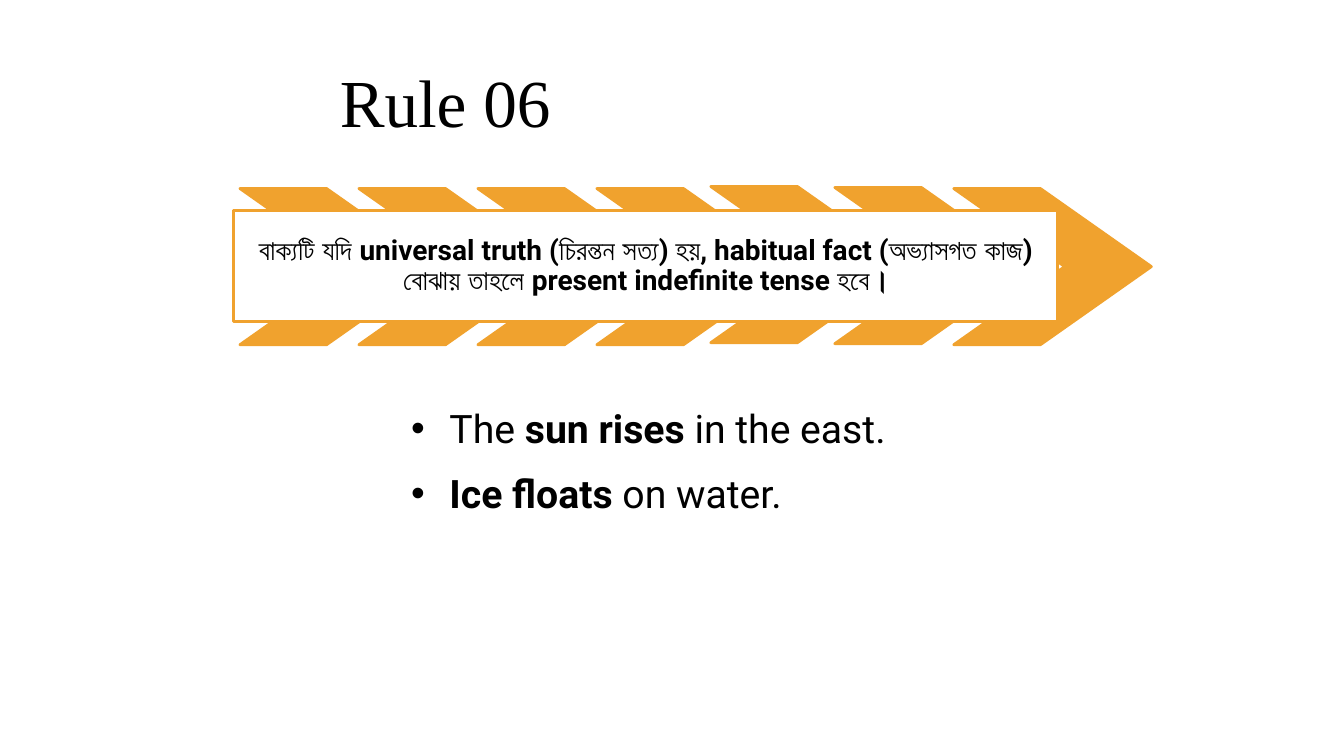
from lxml import etree
from pptx import Presentation
from pptx.dml.color import RGBColor
from pptx.enum.shapes import MSO_SHAPE
from pptx.enum.text import MSO_ANCHOR, PP_ALIGN
from pptx.oxml.ns import qn
from pptx.util import Inches, Pt

CHEVRON = MSO_SHAPE.CHEVRON
RECTANGLE = MSO_SHAPE.RECTANGLE
ANCHOR_TOP, ANCHOR_MIDDLE, ANCHOR_BOTTOM = MSO_ANCHOR.TOP, MSO_ANCHOR.MIDDLE, MSO_ANCHOR.BOTTOM
CENTER = PP_ALIGN.CENTER

ORANGE = RGBColor(0xF0, 0xA2, 0x2E)
WHITE = RGBColor(0xFF, 0xFF, 0xFF)
BLACK = RGBColor(0x00, 0x00, 0x00)
SERIF, SANS = "Times New Roman", "Roboto"

RULE = ("বাক্যটি যদি universal truth (চিরন্তন সত্য) হয়, habitual fact "
        "(অভ্যাসগত কাজ) বোঝায় তাহলে present indefinite tense হবে।")
# Each example is a list of (text, bold) runs
EXAMPLES = [
    [("The ", False), ("sun rises ", True), ("in the east.", False)],
    [("Ice floats ", True), ("on water.", False)],
]

CHEVRON_COUNT = 7
CHEVRON_LEFT, CHEVRON_TOP, CHEVRON_STEP = 2.38, 1.87, 1.18
# Two chevrons sit slightly off the row: index -> (right, down)
CHEVRON_SHIFTS = {4: (-0.05, -0.02), 5: (0, -0.01)}


def set_frame(shape, anchor, margin_x, margin_y):
    frame = shape.text_frame
    frame.word_wrap = True
    frame.vertical_anchor = anchor
    frame.margin_left = frame.margin_right = Inches(margin_x)
    frame.margin_top = frame.margin_bottom = Inches(margin_y)
    return frame


def style_paragraph(paragraph, font_name, size, line_spacing):
    paragraph.line_spacing = line_spacing
    paragraph.font.name = font_name
    paragraph.font.size = Pt(size)
    paragraph.font.color.rgb = BLACK


def add_outlined_shape(slide, kind, left, top, width, height, fill):
    shape = slide.shapes.add_shape(
        kind, Inches(left), Inches(top), Inches(width), Inches(height))
    shape.shadow.inherit = False
    shape.fill.solid()
    shape.fill.fore_color.rgb = fill
    shape.line.color.rgb = ORANGE
    shape.line.width = Pt(2)
    return shape


def add_text_box(slide, left, top, width, height):
    return slide.shapes.add_textbox(
        Inches(left), Inches(top), Inches(width), Inches(height))


def add_title(slide):
    box = add_text_box(slide, 3.17, 0.85, 8.36, 0.76)
    paragraph = set_frame(box, ANCHOR_BOTTOM, 0.2, 0.2).paragraphs[0]
    paragraph.text = "Rule 06"
    style_paragraph(paragraph, SERIF, 48, 0.9)


def add_chevrons(slide):
    for index in range(CHEVRON_COUNT):
        right, down = CHEVRON_SHIFTS.get(index, (0, 0))
        chevron = add_outlined_shape(
            slide, CHEVRON, CHEVRON_LEFT + index * CHEVRON_STEP + right,
            CHEVRON_TOP + down, 1.96, 1.55, ORANGE)
        chevron.adjustments[0] = 0.71


def add_rule_panel(slide):
    panel = add_outlined_shape(slide, RECTANGLE, 2.32, 2.09, 8.17, 1.1, WHITE)
    paragraph = set_frame(panel, ANCHOR_MIDDLE, 0.06, 0.06).paragraphs[0]
    paragraph.text = RULE
    paragraph.alignment = CENTER
    style_paragraph(paragraph, SANS, 20, 0.9)
    paragraph.font.bold = True


def add_bullet(paragraph):
    properties = paragraph._p.get_or_add_pPr()
    properties.set("marL", str(Inches(0.38)))
    properties.set("indent", str(-Inches(0.38)))
    etree.SubElement(properties, qn("a:buFont"), typeface="Arial")
    etree.SubElement(properties, qn("a:buChar"), char="•")


def add_examples(slide):
    box = add_text_box(slide, 3.98, 3.89, 5, 1.28)
    frame = set_frame(box, ANCHOR_TOP, 0.1, 0.05)
    for index, example in enumerate(EXAMPLES):
        paragraph = frame.add_paragraph() if index else frame.paragraphs[0]
        add_bullet(paragraph)
        style_paragraph(paragraph, SANS, 28, 1.15)
        paragraph.space_after = Pt(8)
        for text, bold in example:
            run = paragraph.add_run()
            run.text = text
            run.font.bold = bold


def main():
    presentation = Presentation()
    presentation.slide_width = Inches(13.33)
    presentation.slide_height = Inches(7.5)
    slide = presentation.slides.add_slide(presentation.slide_layouts[6])

    # Heading
    add_title(slide)
    # Arrow band with the grammar rule
    add_chevrons(slide)
    add_rule_panel(slide)
    # Example sentences
    add_examples(slide)

    presentation.save("out.pptx")


if __name__ == "__main__":
    main()
